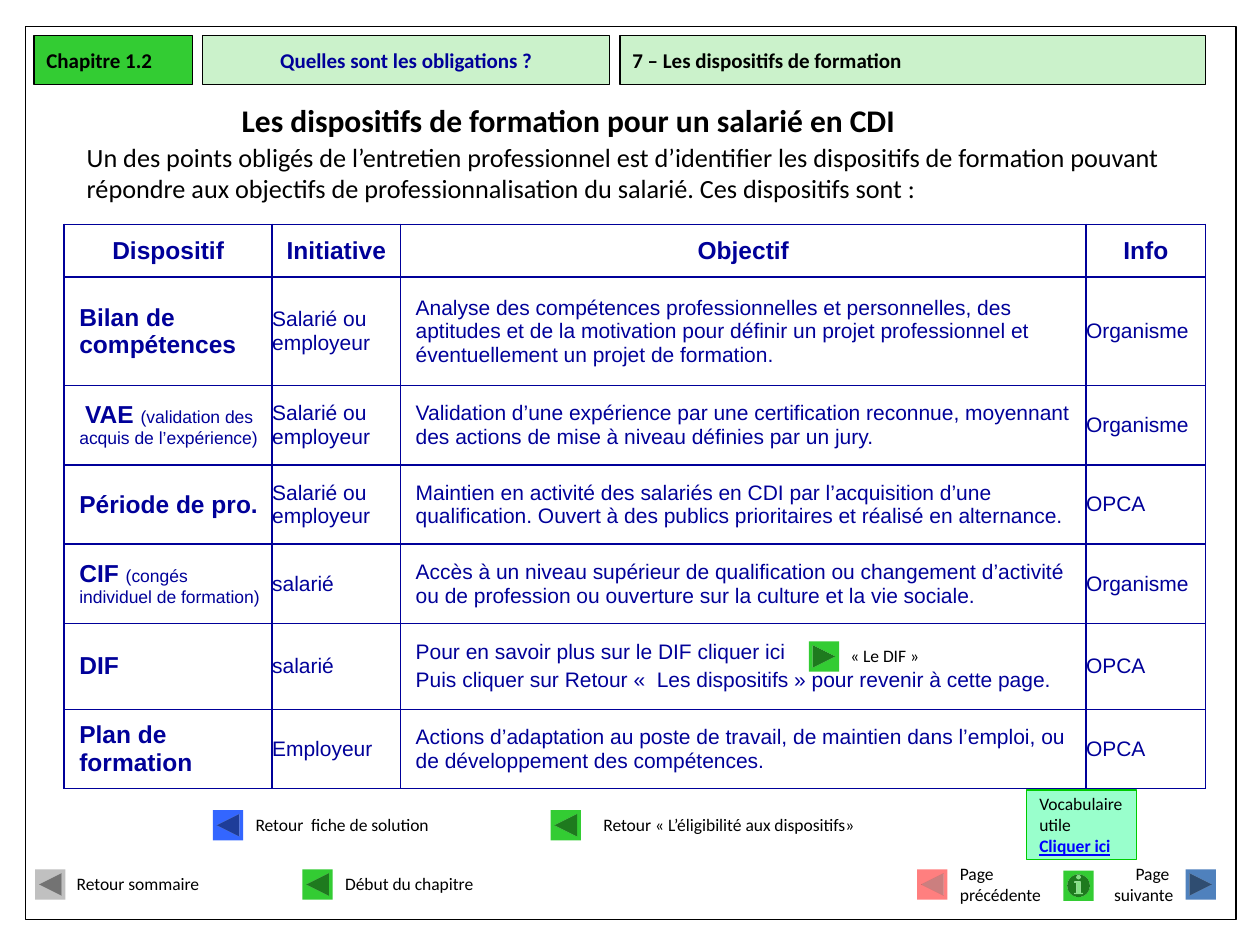
from dataclasses import dataclass, field
from typing import Any, NamedTuple, Optional

import pptx
import pptx.dml.color
import pptx.enum.shapes
import pptx.enum.text
import pptx.oxml
import pptx.oxml.ns
import pptx.util

Inches, Pt = pptx.util.Inches, pptx.util.Pt
SHAPE = pptx.enum.shapes.MSO_SHAPE
ALIGN = pptx.enum.text.PP_ALIGN
MIDDLE = pptx.enum.text.MSO_ANCHOR.MIDDLE
TOP = pptx.enum.text.MSO_ANCHOR.TOP
BACK, NEXT = SHAPE.ACTION_BUTTON_BACK_OR_PREVIOUS, SHAPE.ACTION_BUTTON_FORWARD_OR_NEXT
BLACK, NAVY, GREEN = "000000", "000099", "33CC33"


class Run(NamedTuple):
    text: str
    size: float = 10
    bold: bool = False
    color: str = BLACK
    font: str = "Calibri"
    underline: bool = False


@dataclass
class Box:
    at: tuple
    paragraphs: list
    fill: Optional[str] = None
    line: Optional[str] = None
    alpha: int = 100
    align: Any = ALIGN.LEFT
    anchor: Any = MIDDLE
    wrap: bool = True


@dataclass
class Button:
    at: tuple
    kind: Any
    fill: str = GREEN
    alpha: int = 100


@dataclass
class Measure:
    name: list
    initiative: str
    goal: list = field(default_factory=list)
    info: str = "OPCA"


def rgb(color: str) -> pptx.dml.color.RGBColor:
    return pptx.dml.color.RGBColor.from_string(color)


def set_attrs(obj: Any, values: dict) -> None:
    for name, value in values.items():
        setattr(obj, name, value)


def write(tf: Any, paragraphs: list, align: Any, spacing: float = 0) -> None:
    """Fill a text frame; spacing is a share of the first run's size."""
    for i, runs in enumerate(paragraphs):
        p = tf.paragraphs[0] if i == 0 else tf.add_paragraph()
        set_attrs(p, {"alignment": align, "space_before": Pt(spacing * runs[0].size)})
        for run in runs:
            r = p.add_run()
            r.text = run.text
            set_attrs(r.font, {"size": Pt(run.size), "bold": run.bold,
                               "name": run.font, "underline": run.underline})
            r.font.color.rgb = rgb(run.color)


def paint(sp: Any, fill: Optional[str], line: Optional[str], alpha: int) -> None:
    sp.shadow.inherit = False
    if fill:
        sp.fill.solid()
        sp.fill.fore_color.rgb = rgb(fill)
        if alpha < 100:
            clr = sp.fill._xPr.find(".//" + pptx.oxml.ns.qn("a:srgbClr"))
            clr.append(pptx.oxml.parse_xml(
                f'<a:alpha {pptx.oxml.ns.nsdecls("a")} val="{alpha * 1000}"/>'))
    else:
        sp.fill.background()
    if line:
        sp.line.color.rgb = rgb(line)
        sp.line.width = Pt(0.75)
    else:
        sp.line.fill.background()


def add_box(s: Any, box: Box) -> None:
    at = [Inches(v) for v in box.at]
    if box.fill or box.line:
        sp = s.shapes.add_shape(SHAPE.RECTANGLE, *at)
        paint(sp, box.fill, box.line, box.alpha)
    else:
        sp = s.shapes.add_textbox(*at)
    set_attrs(sp.text_frame, {"word_wrap": box.wrap, "vertical_anchor": box.anchor})
    write(sp.text_frame, box.paragraphs, box.align)


def add_button(s: Any, button: Button) -> None:
    sp = s.shapes.add_shape(button.kind, *(Inches(v) for v in button.at),
                            Inches(0.24), Inches(0.24))
    paint(sp, button.fill, None, button.alpha)


def add_cell(cell: Any, paragraphs: list, align: Any, side: tuple, edge: float) -> None:
    margins = {"margin_left": side[0], "margin_right": side[1],
               "margin_top": edge, "margin_bottom": edge}
    set_attrs(cell, {k: Inches(v) for k, v in margins.items()})
    cell.vertical_anchor = MIDDLE
    cell.fill.background()
    write(cell.text_frame, paragraphs, align, 0.2)
    tc_pr = cell._tc.get_or_add_tcPr()
    for i, tag in enumerate(("lnL", "lnR", "lnT", "lnB")):
        tc_pr.insert(i, pptx.oxml.parse_xml(
            f'<a:{tag} {pptx.oxml.ns.nsdecls("a")} w="12700"><a:solidFill>'
            f'<a:srgbClr val="{NAVY}"/></a:solidFill></a:{tag}>'))


def cell_run(text: str, size: float = 12) -> Run:
    return Run(text, size, size == 14, NAVY, "Arial")


def add_measures(s: Any, headers: list, measures: list) -> None:
    widths = [1.65, 1.02, 5.44, 0.95]
    heights = [0.42, 0.86, 0.63, 0.63, 0.63, 0.68, 0.63]
    table = s.shapes.add_table(len(heights), len(widths), Inches(0.51), Inches(1.78),
                               Inches(sum(widths)), Inches(sum(heights))).table
    for column, width in zip(table.columns, widths):
        column.width = Inches(width)
    for row, height in zip(table.rows, heights):
        row.height = Inches(height)
    for c, header in enumerate(headers):
        add_cell(table.cell(0, c), [[cell_run(header, 14)]], ALIGN.CENTER, (0, 0), 0)
    for i, m in enumerate(measures, 1):
        contents = [[m.name], [[cell_run(m.initiative)]],
                    [[cell_run(line)] for line in m.goal], [[cell_run(m.info)]]]
        for c, paragraphs in enumerate(contents):
            side = (0, 0) if c % 2 else (0.12, 0.08)
            add_cell(table.cell(i, c), paragraphs, ALIGN.LEFT, side, 0.08 if c == 2 else 0)


HEADERS = ["Dispositif", "Initiative", "Objectif", "Info"]
MEASURES = [
    Measure([cell_run("Bilan de compétences", 14)], "Salarié ou employeur",
            ["Analyse des compétences professionnelles et personnelles, des aptitudes et de la "
             "motivation pour définir un projet professionnel et éventuellement un projet de "
             "formation."], "Organisme"),
    Measure([cell_run(" "), cell_run("VAE ", 14),
             cell_run("(validation des acquis de l’expérience)", 10)], "Salarié ou employeur",
            ["Validation d’une expérience par une certification reconnue, moyennant des actions "
             "de mise à niveau définies par un jury."], "Organisme"),
    Measure([cell_run("Période de pro.", 14)], "Salarié ou employeur",
            ["Maintien en activité des salariés en CDI par l’acquisition d’une qualification. "
             "Ouvert à des publics prioritaires et réalisé en alternance."]),
    Measure([cell_run("CIF ", 14), cell_run("(congés individuel de formation)", 10)], "salarié",
            ["Accès à un niveau supérieur de qualification ou changement d’activité ou de "
             "profession ou ouverture sur la culture et la vie sociale."], "Organisme"),
    Measure([cell_run("DIF", 14)], "salarié",
            ["Pour en savoir plus sur le DIF cliquer ici",
             "Puis cliquer sur Retour «  Les dispositifs » pour revenir à cette page."]),
    Measure([cell_run("Plan de formation", 14)], "Employeur",
            ["Actions d’adaptation au poste de travail, de maintien dans l’emploi, ou de "
             "développement des compétences."]),
]
BANNER = [
    Box((0.2, 0.21, 9.61, 7.09), [], line=BLACK),
    Box((0.27, 0.28, 1.26, 0.39), [[Run("Chapitre 1.2", 12, True)]], GREEN, BLACK),
    Box((1.61, 0.28, 3.23, 0.39), [[Run("Quelles sont les obligations ?", 12, True, NAVY)]],
        GREEN, BLACK, 25, ALIGN.CENTER),
    Box((4.92, 0.28, 4.65, 0.39), [[Run("7 – Les dispositifs de formation", 12, True)]],
        GREEN, BLACK, 25),
    Box((1.82, 0.75, 6.26, 0.4),
        [[Run("Les dispositifs de formation pour un salarié en CDI", 18, True)]], anchor=TOP),
    Box((0.59, 1.07, 9.13, 0.6),
        [[Run("Un des points obligés de l’entretien professionnel est d’identifier les "
              "dispositifs de formation pouvant répondre aux objectifs de professionnalisation "
              "du salarié. Ces dispositifs sont :", 15)]], anchor=TOP),
]
LABELS = [
    Box((0.51, 6.82, 1.81, 0.39), [[Run("Retour sommaire")]]),
    Box((2.64, 6.82, 1.81, 0.39), [[Run("Début du chapitre")]]),
    Box((1.93, 6.35, 1.57, 0.39), [[Run("Retour  fiche de solution")]]),
    Box((4.69, 6.35, 2.68, 0.39), [[Run("Retour « L’éligibilité aux dispositifs»")]]),
    Box((6.65, 5.01, 1.1, 0.39), [[Run("« Le DIF »")]]),
    Box((7.52, 6.82, 0.87, 0.39), [[Run("Page")], [Run("précédente")]]),
    Box((8.7, 6.82, 0.71, 0.39), [[Run("Page ")], [Run("suivante")]], align=ALIGN.RIGHT),
    Box((8.15, 6.27, 0.87, 0.55),
        [[Run("Vocabulaire")], [Run("utile")],
         [Run("Cliquer ici", bold=True, color="0000FF", underline=True)]],
        "99FFCC", "00CC00", wrap=False),
]
BUTTONS = [
    Button((0.28, 6.9), BACK, "C0C0C0"),
    Button((2.4, 6.9), BACK),
    Button((1.69, 6.43), BACK, "3366FF"),
    Button((4.37, 6.43), BACK),
    Button((6.42, 5.09), NEXT),
    Button((7.28, 6.9), BACK, "FF0000", 50),
    Button((8.44, 6.91), SHAPE.ACTION_BUTTON_INFORMATION),
    Button((9.41, 6.9), NEXT, "4F81BD"),
]


def main() -> None:
    prs = pptx.Presentation()
    prs.slide_width, prs.slide_height = Inches(10), Inches(7.5)
    s = prs.slides.add_slide(prs.slide_layouts[6])
    for box in BANNER:
        add_box(s, box)
    add_measures(s, HEADERS, MEASURES)
    for button in BUTTONS:
        add_button(s, button)
    for box in LABELS:
        add_box(s, box)
    prs.save("out.pptx")


if __name__ == "__main__":
    main()
